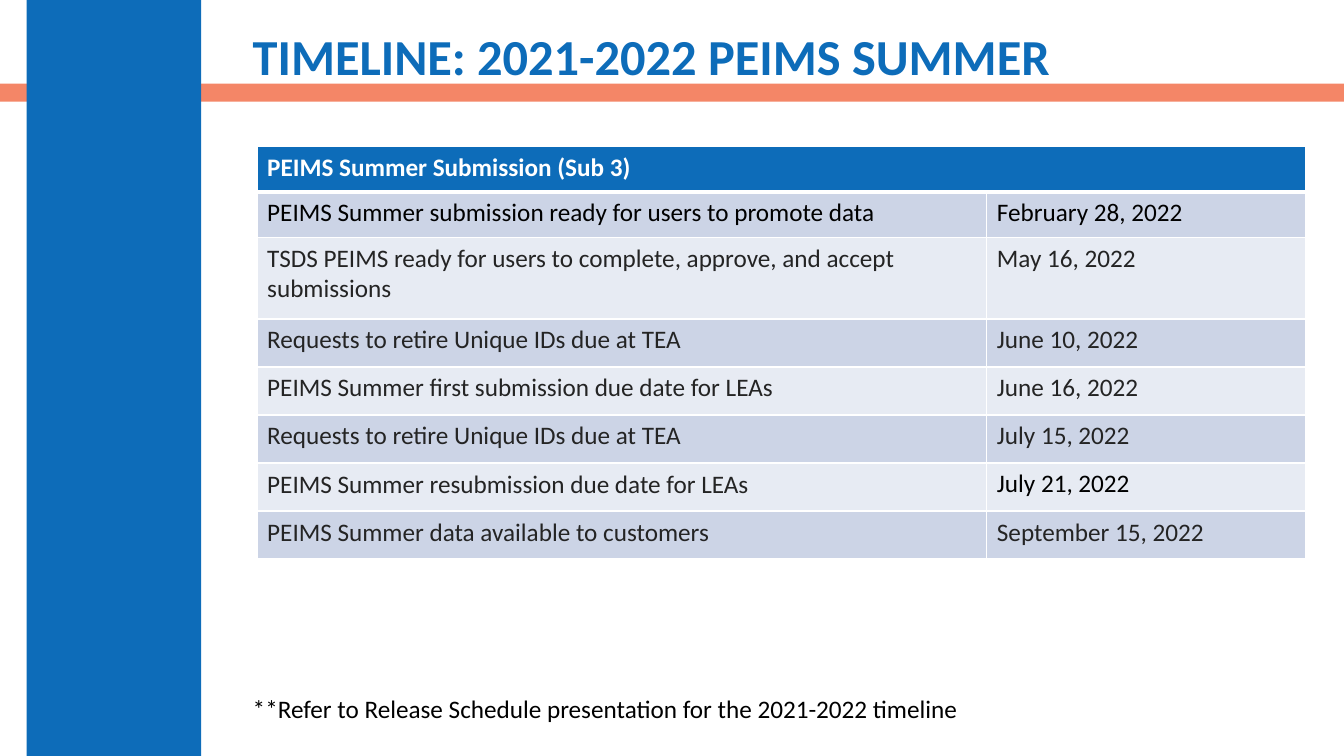
from lxml.etree import SubElement
from pptx import Presentation
from pptx.dml.color import RGBColor
from pptx.enum.shapes import MSO_SHAPE as Shape
from pptx.enum.text import MSO_ANCHOR as Anchor
from pptx.oxml.ns import qn
from pptx.util import Cm, Pt

BLUE = RGBColor(0x0D, 0x6C, 0xB9)
CORAL = RGBColor(0xF1, 0x60, 0x38)
BAND_DARK = RGBColor(0xCC, 0xD4, 0xE6)
BAND_LIGHT = RGBColor(0xE7, 0xEB, 0xF3)
WHITE = RGBColor(0xFF, 0xFF, 0xFF)
BLACK = RGBColor(0x00, 0x00, 0x00)
CHARCOAL = RGBColor(0x24, 0x24, 0x24)

TIGHT, ROOMY = 0.13, 0.15  # top and bottom cell margins in cm

HEADING = "PEIMS Summer Submission (Sub 3)"
MILESTONES = [
    ("PEIMS Summer submission ready for users to promote data", "February 28, 2022"),
    ("TSDS PEIMS ready for users to complete, approve, and accept submissions", "May 16, 2022"),
    ("Requests to retire Unique IDs due at TEA", "June 10, 2022"),
    ("PEIMS Summer first submission due date for LEAs", "June 16, 2022"),
    ("Requests to retire Unique IDs due at TEA", "July 15, 2022"),
    ("PEIMS Summer resubmission due date for LEAs", "July 21, 2022"),
    ("PEIMS Summer data available to customers", "September 15, 2022"),
]
EMPHASIZED = {MILESTONES[0][0], "February 28, 2022", "July 21, 2022"}
COLUMN_WIDTHS = [18.39, 8.03]
ROW_HEIGHTS = [1.14, 1.14, 2.06] + [1.21] * 5


class TimelineSlide:
    font_name = "Calibri"

    def __init__(self, deck):
        self.page = deck.slides.add_slide(deck.slide_layouts[6])

    def bar(self, left, top, width, height, color, opacity=100):
        shape = self.page.shapes.add_shape(
            Shape.RECTANGLE, Cm(left), Cm(top), Cm(width), Cm(height))
        shape.shadow.inherit = False
        shape.line.fill.background()
        shape.fill.solid()
        shape.fill.fore_color.rgb = color
        if opacity < 100:
            tint = shape.element.spPr.find(qn("a:solidFill"))[0]
            SubElement(tint, qn("a:alpha"), val=str(opacity * 1000))

    def add_span(self, frame, text, color, size=18, bold=False):
        """Put one styled run in the first paragraph of a text frame."""
        frame.word_wrap = True
        span = frame.paragraphs[0].add_run()
        span.text = text
        style = {"name": self.font_name, "size": Pt(size), "bold": bold}
        for name, value in style.items():
            setattr(span.font, name, value)
        span.font.color.rgb = color

    def text(self, left, top, width, height, text, color, anchor=Anchor.TOP,
             spacing=1.0, **style):
        box = self.page.shapes.add_textbox(Cm(left), Cm(top), Cm(width), Cm(height))
        frame = box.text_frame
        frame.vertical_anchor = anchor
        frame.paragraphs[0].line_spacing = spacing
        self.add_span(frame, text, color, **style)

    def borders(self, cell, top=1, bottom=1):
        """Draw white cell borders, with widths in points."""
        properties = cell._tc.get_or_add_tcPr()
        for side, width in {"L": 1, "R": 1, "T": top, "B": bottom}.items():
            line = SubElement(properties, qn(f"a:ln{side}"), w=str(Pt(width)))
            fill = SubElement(line, qn("a:solidFill"))
            SubElement(fill, qn("a:srgbClr"), val=str(WHITE))

    def cell(self, cell, text, fill, color, margin=TIGHT, bold=False, **widths):
        self.borders(cell, **widths)
        cell.fill.solid()
        cell.fill.fore_color.rgb = fill
        cell.margin_top = cell.margin_bottom = Cm(margin)
        if text:
            self.add_span(cell.text_frame, text, color, bold=bold)

    def timeline(self, left, top):
        grid = self.page.shapes.add_table(
            len(ROW_HEIGHTS), len(COLUMN_WIDTHS), Cm(left), Cm(top),
            Cm(sum(COLUMN_WIDTHS)), Cm(sum(ROW_HEIGHTS))).table
        for column, width in zip(grid.columns, COLUMN_WIDTHS):
            column.width = Cm(width)
        for row, height in zip(grid.rows, ROW_HEIGHTS):
            row.height = Cm(height)

        grid.cell(0, 0).merge(grid.cell(0, 1))
        for index, text in enumerate([HEADING, ""]):
            self.cell(grid.cell(0, index), text, BLUE, WHITE, bold=True, bottom=3)
        for row, milestone in enumerate(MILESTONES, start=1):
            fill = BAND_DARK if row % 2 else BAND_LIGHT
            for column, text in enumerate(milestone):
                strong = text in EMPHASIZED
                self.cell(grid.cell(row, column), text, fill,
                          BLACK if strong else CHARCOAL,
                          TIGHT if strong else ROOMY, top=3 if row == 1 else 1)


def main():
    deck = Presentation()
    deck.slide_width, deck.slide_height = Cm(33.87), Cm(19.05)
    slide = TimelineSlide(deck)
    slide.bar(0, 2.11, 33.87, 0.45, CORAL, opacity=76)
    slide.bar(0.67, 0, 4.4, 19.05, BLUE)
    slide.text(6.12, 0.46, 26.75, 2.08, "TIMELINE: 2021-2022 PEIMS SUMMER", BLUE,
               anchor=Anchor.MIDDLE, spacing=0.9, size=36, bold=True)
    slide.text(6.12, 17.35, 26.04, 1.02,
               "**Refer to Release Schedule presentation for the 2021-2022 timeline", BLACK)
    slide.timeline(6.48, 3.7)
    deck.save("out.pptx")


if __name__ == "__main__":
    main()
